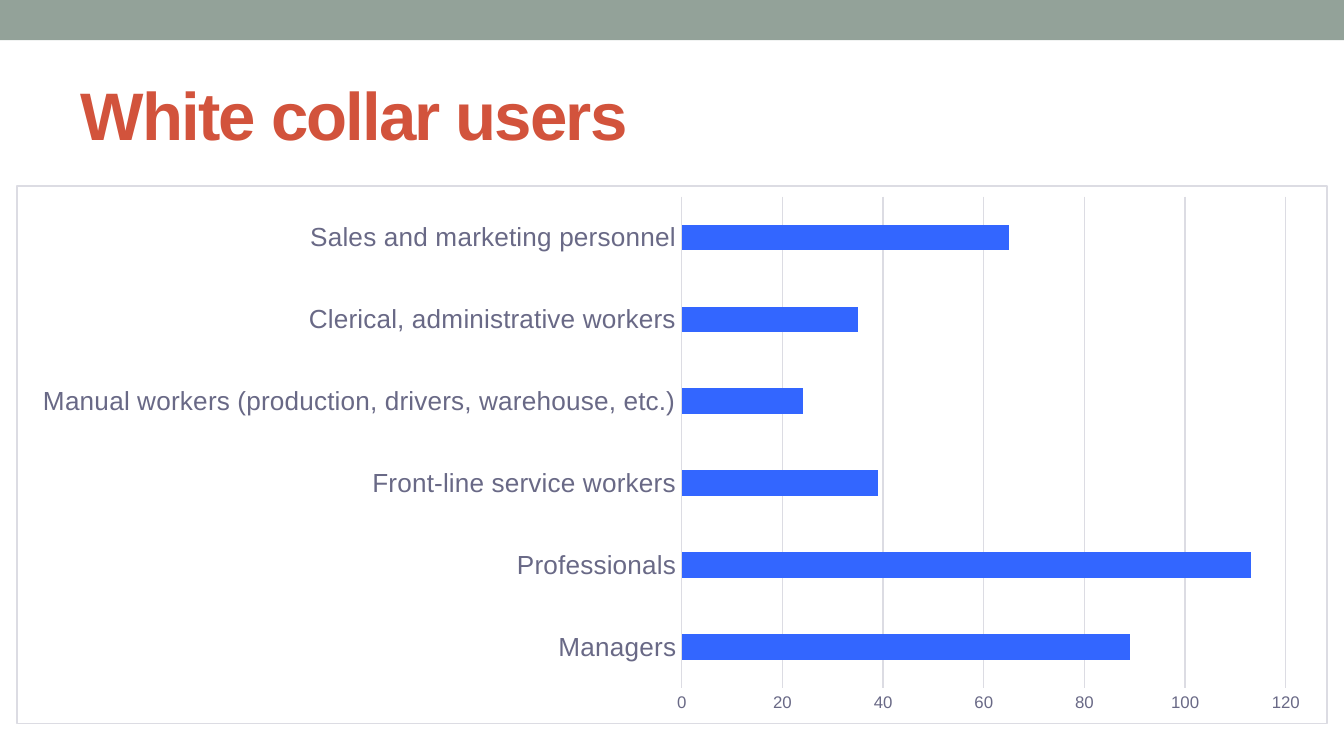
from lxml.etree import SubElement
from pptx import Presentation
from pptx.chart.data import CategoryChartData
from pptx.dml.color import RGBColor
from pptx.enum.chart import XL_CHART_TYPE as ChartType, XL_TICK_MARK as TickMark
from pptx.enum.shapes import MSO_SHAPE as Shape
from pptx.enum.text import MSO_ANCHOR as Anchor, MSO_AUTO_SIZE as AutoSize, PP_ALIGN as Align
from pptx.oxml import parse_xml
from pptx.oxml.ns import nsdecls, qn
from pptx.util import Inches, Pt

# A 16:9 slide
WIDTH = Inches(10)
HEIGHT = WIDTH * 9 // 16
FONT = "Arial"
COLORS = {
    "band": "93A299", "title": "D2533C", "bar": "3366FF", "text": "292934",
    "label": "696986", "rule": "DCDCE3", "paper": "FFFFFF",
}
USERS = {
    "Managers": 89,
    "Professionals": 113,
    "Front-line service workers": 39,
    "Manual workers (production, drivers, warehouse, etc.)": 24,
    "Clerical, administrative workers": 35,
    "Sales and marketing personnel": 65,
}
# Plot area in percent of the chart's size
PLOT = {"x": 50.75, "y": 2, "w": 46.1, "h": 91.4}


def color(name):
    return RGBColor.from_string(COLORS[name])


def percent(left, top, width, height):
    """Turn percentages of the slide's size into a box."""
    return (round(left * WIDTH / 100), round(top * HEIGHT / 100),
            round(width * WIDTH / 100), round(height * HEIGHT / 100))


def set_font(font, size, name):
    font.name, font.size, font.color.rgb = FONT, Pt(size), color(name)


def set_rule(line):
    line.color.rgb, line.width = color("rule"), Pt(0.75)


def add_band(page, box):
    band = page.shapes.add_shape(Shape.RECTANGLE, *box)
    band.shadow.inherit = False
    band.fill.solid()
    band.fill.fore_color.rgb = color("band")
    band.line.fill.background()


def add_title(page, box, text):
    title = page.shapes.title
    title.left, title.top, title.width, title.height = box
    frame = title.text_frame
    frame.auto_size, frame.word_wrap = AutoSize.NONE, True
    frame.vertical_anchor = Anchor.MIDDLE
    para = frame.paragraphs[0]
    para.alignment = Align.LEFT
    span = para.add_run()
    span.text = text
    set_font(span.font, 36, "title")
    span.font.bold = True
    # Tighten the letters by one point
    span.font._element.set("spc", "-100")


def frame_chart(chart):
    """Give the chart its background, border and plot position."""
    space = chart._chartSpace
    body = space.find(qn("c:chart"))
    body.addnext(parse_xml(
        f'<c:spPr {nsdecls("c", "a")}>'
        f'<a:solidFill><a:srgbClr val="{COLORS["paper"]}"/></a:solidFill>'
        f'<a:ln w="{Pt(0.75)}"><a:solidFill><a:srgbClr val="{COLORS["rule"]}"/>'
        '</a:solidFill></a:ln></c:spPr>'))
    plot_area = body.find(qn("c:plotArea"))
    for old in plot_area.findall(qn("c:layout")):
        plot_area.remove(old)
    layout = parse_xml(f'<c:layout {nsdecls("c")}><c:manualLayout/></c:layout>')
    settings = {"layoutTarget": "inner", "xMode": "edge", "yMode": "edge"}
    settings.update({side: value / 100 for side, value in PLOT.items()})
    for tag, value in settings.items():
        SubElement(layout[0], qn(f"c:{tag}")).set("val", str(value))
    plot_area.insert(0, layout)


def add_user_chart(page, box):
    data = CategoryChartData()
    data.categories = list(USERS)
    data.add_series("Series 1", list(USERS.values()))
    chart = page.shapes.add_chart(ChartType.BAR_CLUSTERED, *box, data).chart
    chart.has_title = chart.has_legend = False
    set_font(chart.font, 10, "text")

    # Bars
    plot = chart.plots[0]
    plot.gap_width, plot.vary_by_categories = 219, False
    fill = plot.series[0].format.fill
    fill.solid()
    fill.fore_color.rgb = color("bar")

    # Axes
    jobs, counts = chart.category_axis, chart.value_axis
    for axis, size in ((jobs, 14), (counts, 9)):
        axis.major_tick_mark = axis.minor_tick_mark = TickMark.NONE
        set_font(axis.tick_labels.font, size, "label")
    set_rule(jobs.format.line)
    counts.format.line.fill.background()
    counts.minimum_scale, counts.maximum_scale, counts.major_unit = 0, 120, 20
    counts.has_major_gridlines = True
    set_rule(counts.major_gridlines.format.line)
    frame_chart(chart)


def main():
    deck = Presentation()
    deck.slide_width, deck.slide_height = WIDTH, HEIGHT
    page = deck.slides.add_slide(deck.slide_layouts[5])
    add_band(page, percent(0, 0, 100, 5.33))
    add_title(page, percent(5, 7.8, 90, 14.4), "White collar users")
    add_user_chart(page, percent(1.2, 24.5, 97.6, 71.3))
    deck.save("out.pptx")


if __name__ == "__main__":
    main()
